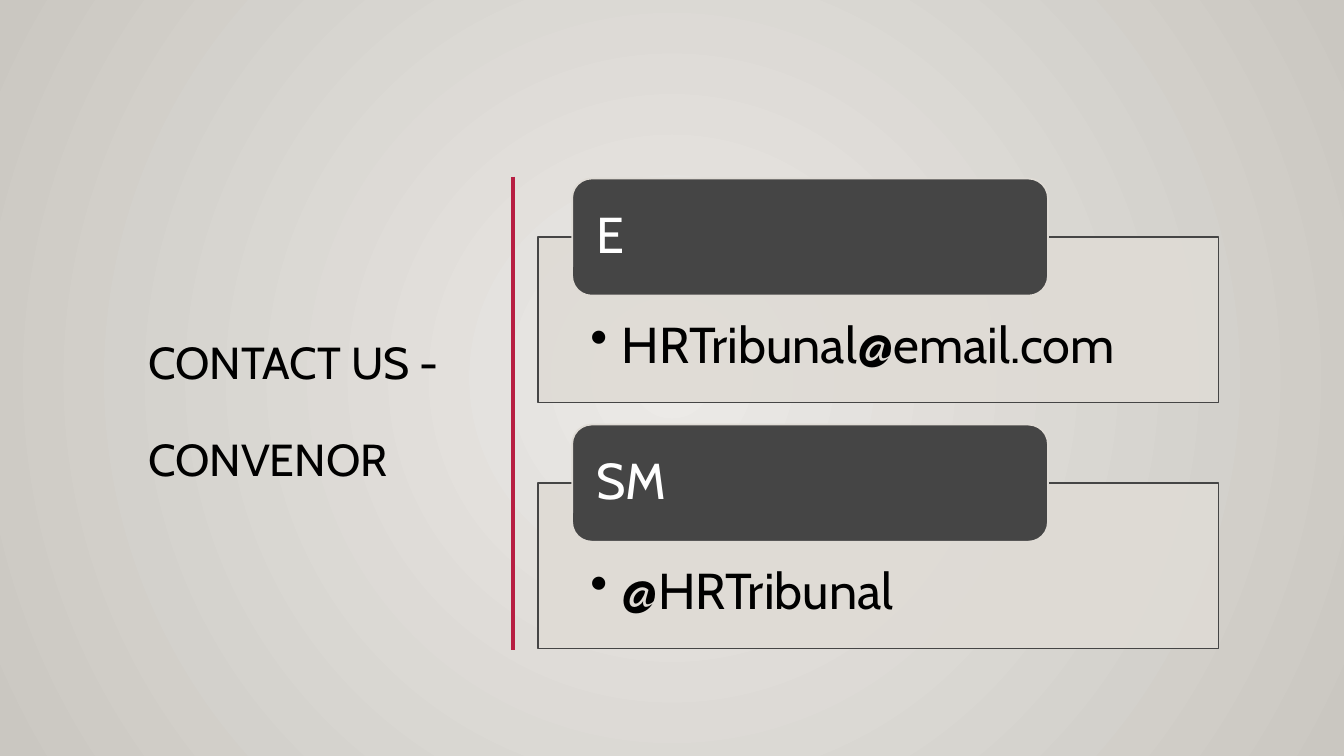
import lxml.etree
import pptx
import pptx.dml.color
import pptx.enum.shapes
import pptx.enum.text
import pptx.oxml.ns
import pptx.util

Cm = pptx.util.Cm
Pt = pptx.util.Pt
RGBColor = pptx.dml.color.RGBColor
Shapes = pptx.enum.shapes.MSO_SHAPE
Anchor = pptx.enum.text.MSO_ANCHOR
qn = pptx.oxml.ns.qn

FONT = "Cabin"
BLACK = RGBColor(0x00, 0x00, 0x00)
WHITE = RGBColor(0xFF, 0xFF, 0xFF)
CRIMSON = RGBColor(0xB7, 0x1E, 0x42)
CHARCOAL = RGBColor(0x45, 0x45, 0x45)
SAND = RGBColor(0xDF, 0xDB, 0xD5)
GLOW = RGBColor(0xEC, 0xEA, 0xE7)
STONE = RGBColor(0xCA, 0xC7, 0xC1)

CONTACTS = [("E", "HRTribunal@email.com"), ("SM", "@HRTribunal")]


def add_child(parent, tag, **attributes):
    return lxml.etree.SubElement(parent, qn(tag), attributes)


def paint_background(slide):
    """Radial gradient, light in the middle."""
    fill = slide.background.fill
    fill.gradient()
    for stop, color, position in zip(fill.gradient_stops, (GLOW, STONE), (0, 1)):
        stop.color.rgb = color
        stop.position = position
    gradient = slide.element.find(".//" + qn("a:gradFill"))
    gradient.remove(gradient.find(qn("a:lin")))
    circle = add_child(gradient, "a:path", path="circle")
    add_child(circle, "a:fillToRect", l="50000", t="50000", r="50000", b="50000")


def format_text(para, size, color):
    para.alignment = pptx.enum.text.PP_ALIGN.LEFT
    para.line_spacing = 0.9
    for span in para.runs:
        span.font.name = FONT
        span.font.size = Pt(size)
        span.font.color.rgb = color


def place_title(slide, left, top, width, height):
    title = slide.shapes.title
    title.left, title.top, title.width, title.height = left, top, width, height
    frame = title.text_frame
    frame.text = "CONTACT US -\nCONVENOR"
    frame.word_wrap = True
    frame.auto_size = pptx.enum.text.MSO_AUTO_SIZE.NONE
    frame.vertical_anchor = Anchor.MIDDLE
    for para in frame.paragraphs:
        format_text(para, 32, BLACK)
    frame.paragraphs[1].space_before = Pt(34.5)


def add_divider(slide, x, top, height):
    divider = slide.shapes.add_connector(
        pptx.enum.shapes.MSO_CONNECTOR.STRAIGHT, x, top, x, top + height)
    divider.line.color.rgb = CRIMSON
    divider.line.width = Pt(2.5)
    add_child(divider.element.spPr, "a:effectLst")


def add_box(slide, kind, left, top, width, height, fill, line):
    box = slide.shapes.add_shape(kind, left, top, width, height)
    box.shadow.inherit = False
    box.fill.solid()
    box.fill.fore_color.rgb = fill
    box.line.color.rgb = line
    box.line.width = Pt(1.25)
    box.text_frame.word_wrap = True
    return box


def add_contact(slide, left, top, width, label, address):
    """Outlined panel with a rounded label overlapping its upper edge."""
    label_height = Cm(2.95)

    # Panel with the bulleted address
    panel = add_box(slide, Shapes.RECTANGLE, left, top + label_height // 2,
                    width, Cm(4.17), SAND, CHARCOAL)
    color = panel.element.spPr.find(qn("a:solidFill"))[0]
    add_child(color, "a:alpha", val="90000")
    frame = panel.text_frame
    frame.margin_left = frame.margin_right = Cm(1.32)
    frame.margin_top, frame.margin_bottom = Cm(2.08), Cm(0.71)
    frame.vertical_anchor = Anchor.TOP
    para = frame.paragraphs[0]
    para.text = address
    properties = para._p.get_or_add_pPr()
    properties.set("marL", str(Cm(0.79)))
    properties.set("indent", str(-Cm(0.79)))
    add_child(properties, "a:buChar", char="•")
    format_text(para, 36, BLACK)

    # Label
    tab = add_box(slide, Shapes.ROUNDED_RECTANGLE, left + Cm(0.86), top,
                  Cm(11.99), label_height, CHARCOAL, SAND)
    frame = tab.text_frame
    frame.margin_left = frame.margin_right = Cm(0.46)
    frame.margin_top = frame.margin_bottom = 0
    frame.vertical_anchor = Anchor.MIDDLE
    frame.text = label
    format_text(frame.paragraphs[0], 36, WHITE)


def add_contact_list(slide, left, top, width, pitch):
    for index, (label, address) in enumerate(CONTACTS):
        add_contact(slide, left, top + index * pitch, width, label, address)


def main():
    deck = pptx.Presentation()
    deck.slide_width, deck.slide_height = Cm(33.87), Cm(19.05)
    slide = deck.slides.add_slide(deck.slide_layouts.get_by_name("Title Only"))
    top, height = Cm(4.45), Cm(11.94)
    paint_background(slide)
    add_divider(slide, Cm(12.93), top, height)
    place_title(slide, Cm(3.48), top, Cm(8.81), height)
    add_contact_list(slide, Cm(13.56), Cm(4.5), Cm(17.15), Cm(6.2))
    deck.save("out.pptx")


if __name__ == "__main__":
    main()
